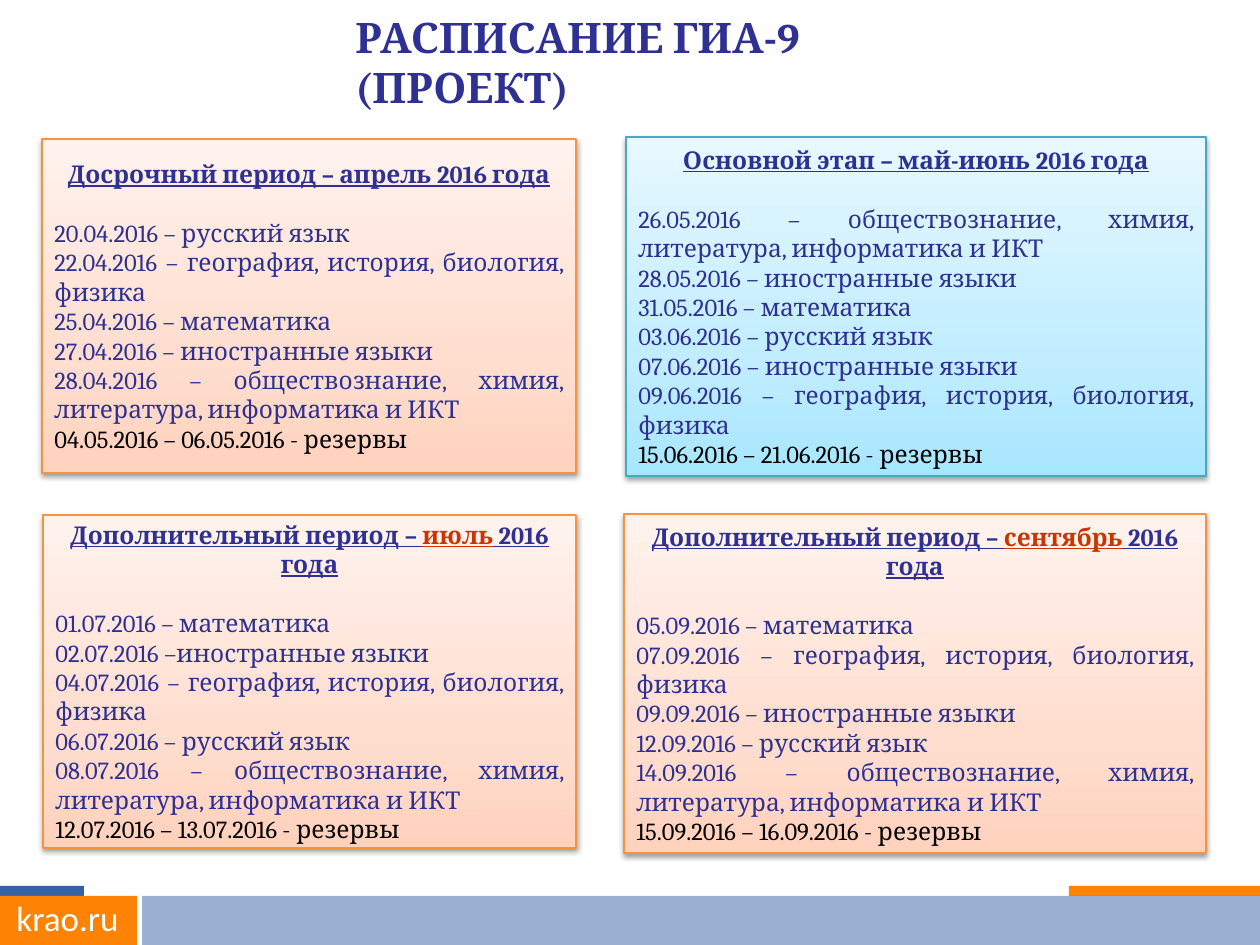
"""Build the GIA-9 exam timetable slide."""
from lxml import etree
from pptx import Presentation
from pptx import util as u
from pptx.dml.color import RGBColor
from pptx.enum import shapes, text
from pptx.oxml import ns

SCALE = 914400 / 126
COLORS = {"navy": "2E3192", "red": "CC3300", "black": "000000", "white": "FFFFFF",
          "blue": "3661A6", "orange": "FE8304"}
THEMES = {"peach": {"line": "F69240", "stops": {0: "FFD2BD", 35: "FFDED0", 100: "FFF2ED"}},
          "sky": {"line": "46AAC5", "stops": {0: "A7E6FF", 35: "C1EDFF", 100: "E7F8FF"}}}
SCIENCES = "география, история, биология, физика"
HUMANITIES = "обществознание, химия, литература, информатика и ИКТ"
LANGUAGES = "иностранные языки"
EXTRA = "Дополнительный период – "
PANELS = [
    ((42, 139, 534, 334), "peach", [("Досрочный период – апрель 2016 года", "navy")],
     ["20.04.2016 – русский язык", f"22.04.2016 – {SCIENCES}", "25.04.2016 – математика",
      f"27.04.2016 – {LANGUAGES}", f"28.04.2016 – {HUMANITIES}"],
     "04.05.2016 – 06.05.2016 - резервы"),
    ((626, 137, 580, 339), "sky", [("Основной этап – май-июнь 2016 года", "navy")],
     [f"26.05.2016 – {HUMANITIES}", f"28.05.2016 – {LANGUAGES}", "31.05.2016 – математика",
      "03.06.2016 – русский язык", f"07.06.2016 – {LANGUAGES}", f"09.06.2016 – {SCIENCES}"],
     "15.06.2016 – 21.06.2016 - резервы"),
    ((43, 515, 533, 333), "peach",
     [(EXTRA, "navy"), ("июль", "red"), (" 2016 года", "navy")],
     ["01.07.2016 – математика", f"02.07.2016 –{LANGUAGES}", f"04.07.2016 – {SCIENCES}",
      "06.07.2016 – русский язык", f"08.07.2016 – {HUMANITIES}"],
     "12.07.2016 – 13.07.2016 - резервы"),
    ((624, 514, 582, 339), "peach",
     [(EXTRA, "navy"), ("сентябрь", "red"), (" 2016 года", "navy")],
     ["05.09.2016 – математика", f"07.09.2016 – {SCIENCES}", f"09.09.2016 – {LANGUAGES}",
      "12.09.2016 – русский язык", f"14.09.2016 – {HUMANITIES}"],
     "15.09.2016 – 16.09.2016 - резервы"),
]


def px(*lengths):
    """Turn pixel lengths into EMU."""
    return [u.Emu(round(length * SCALE)) for length in lengths]


def rgb(name):
    """Look up a named colour."""
    return RGBColor.from_string(COLORS[name])


def add_element(parent, tag, **attributes):
    """Append a DrawingML element."""
    return etree.SubElement(parent, ns.qn(f"a:{tag}"), {k: str(v) for k, v in attributes.items()})


def add_shadow(effects, blur, distance, opacity):
    """Put a downward outer shadow into an effect list."""
    shadow = add_element(effects, "outerShdw", blurRad=u.Pt(blur), dist=u.Pt(distance),
                         dir=5400000, rotWithShape=0)
    color = add_element(shadow, "srgbClr", val=COLORS["black"])
    add_element(color, "alpha", val=opacity * 1000)


def format_run(run, size, color="navy", font="Cambria", bold=False, underline=False):
    """Set the font of one run."""
    run.font.size = u.Pt(size)
    run.font.bold = bold
    run.font.underline = underline
    run.font.color.rgb = rgb(color)
    run.font.name = font


def add_bar(slide, box, color, opacity=100):
    """Add a plain footer rectangle."""
    shape = slide.shapes.add_shape(shapes.MSO_SHAPE.RECTANGLE, *px(*box))
    shape.shadow.inherit = False
    shape.fill.solid()
    shape.fill.fore_color.rgb = rgb(color)
    shape.line.fill.background()
    if opacity < 100:
        fill_color = shape.fill._xPr.find(".//" + ns.qn("a:srgbClr"))
        add_element(fill_color, "alpha", val=opacity * 1000)


def add_label(slide, box, wording, anchor, alignment, **style):
    """Add a one-paragraph text box and return its run."""
    frame = slide.shapes.add_textbox(*px(*box)).text_frame
    frame.word_wrap = True
    frame.vertical_anchor = anchor
    frame.text = wording
    paragraph = frame.paragraphs[0]
    paragraph.alignment = alignment
    format_run(paragraph.runs[0], **style)
    return paragraph.runs[0]


def add_title(slide):
    """Add the slide title with shadowed letters."""
    run = add_label(slide, (343, 30, 680, 64), "РАСПИСАНИЕ ГИА-9 (ПРОЕКТ)",
                    text.MSO_ANCHOR.MIDDLE, text.PP_ALIGN.LEFT, size=24, bold=True)
    properties = run._r.get_or_add_rPr()
    effects = etree.Element(ns.qn("a:effectLst"))
    add_shadow(effects, 3, 3, 40)
    properties.find(ns.qn("a:latin")).addprevious(effects)


def paint_panel(shape, theme):
    """Give a panel its gradient, outline and shadow."""
    shape.fill.gradient()
    shape.fill.gradient_angle = 90
    stops = shape._element.spPr.find(".//" + ns.qn("a:gsLst"))
    for stop in list(stops):
        stops.remove(stop)
    for position, color in theme["stops"].items():
        add_element(add_element(stops, "gs", pos=position * 1000), "srgbClr", val=color)
    shape.line.color.rgb = RGBColor.from_string(theme["line"])
    shape.line.width = u.Pt(0.75)
    shape.shadow.inherit = False
    add_shadow(shape._element.spPr.find(ns.qn("a:effectLst")), 3.1, 1.6, 38)


def add_panel(slide, box, theme, heading, exams, reserve):
    """Add one exam period with its dates."""
    shape = slide.shapes.add_shape(shapes.MSO_SHAPE.RECTANGLE, *px(*box))
    paint_panel(shape, THEMES[theme])
    frame = shape.text_frame
    frame.word_wrap = True
    frame.vertical_anchor = text.MSO_ANCHOR.MIDDLE
    paragraph = frame.paragraphs[0]
    paragraph.alignment = text.PP_ALIGN.CENTER
    paragraph.space_after = u.Pt(17)
    for wording, color in heading:
        run = paragraph.add_run()
        run.text = wording
        format_run(run, 14, color, bold=True, underline=True)
    for wording in [*exams, reserve]:
        paragraph = frame.add_paragraph()
        paragraph.text = wording
        paragraph.alignment = text.PP_ALIGN.JUSTIFY
        format_run(paragraph.runs[0], 14, "black" if wording == reserve else "navy")


def add_footer(slide):
    """Add the footer bars and the site address."""
    add_bar(slide, (0, 886, 84, 10), "blue")
    add_bar(slide, (1069, 886, 191, 10), "orange")
    add_bar(slide, (0, 896, 137, 49), "orange")
    add_bar(slide, (142, 896, 1118, 49), "blue", opacity=50)
    add_label(slide, (0, 890, 135, 55), "krao.ru", text.MSO_ANCHOR.TOP,
              text.PP_ALIGN.CENTER, size=20, color="white", font="Calibri")


def main():
    """Build and save the presentation."""
    presentation = Presentation()
    presentation.slide_width, presentation.slide_height = px(1260, 945)
    slide = presentation.slides.add_slide(presentation.slide_layouts[6])
    add_footer(slide)
    add_title(slide)
    for panel in PANELS:
        add_panel(slide, *panel)
    presentation.save("out.pptx")


if __name__ == "__main__":
    main()
